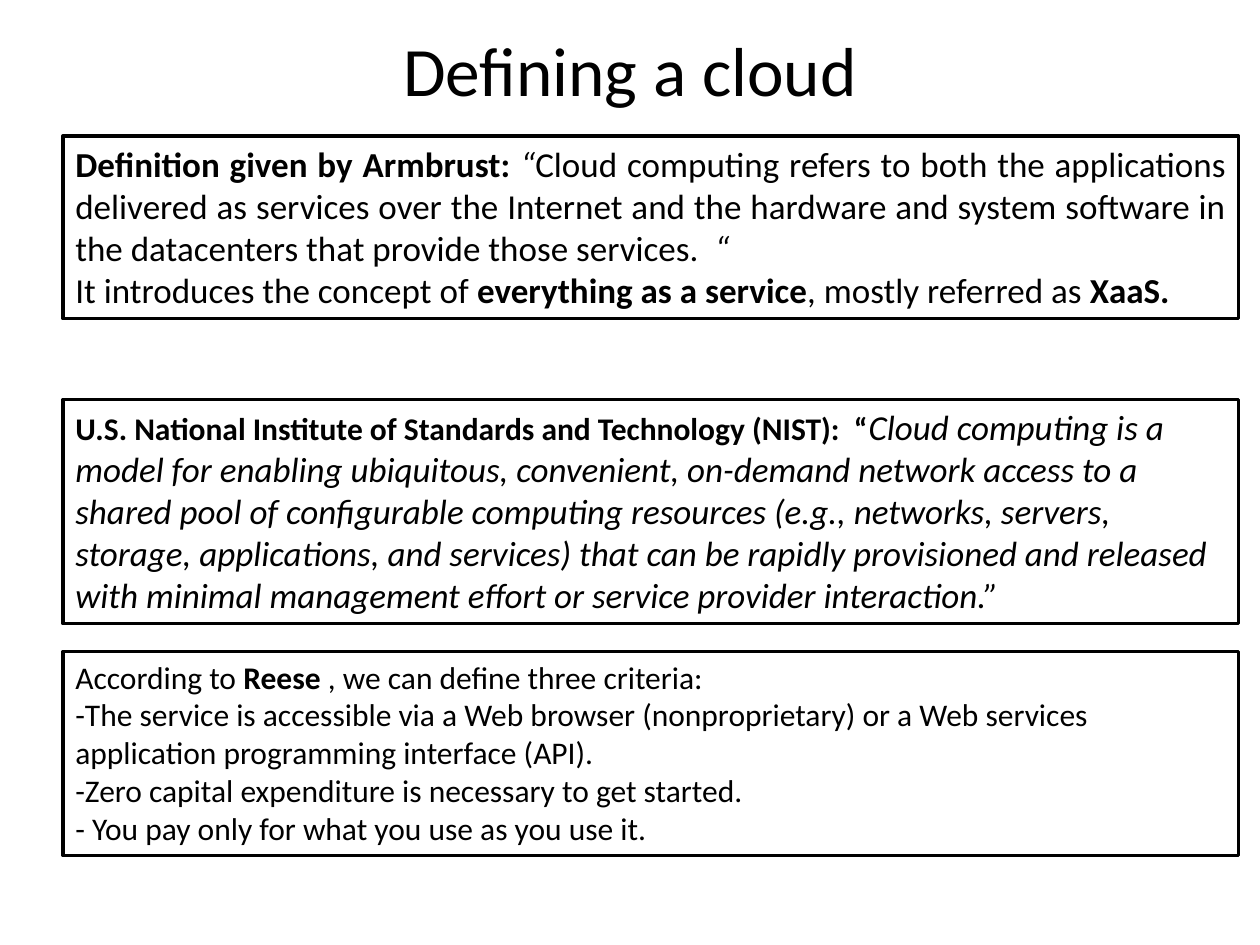
from pptx import Presentation
from pptx.dml.color import RGBColor
from pptx.enum.shapes import MSO_SHAPE as Shape
from pptx.enum.text import MSO_ANCHOR as Anchor, MSO_AUTO_SIZE as AutoSize, PP_ALIGN as Align
from pptx.util import Inches, Pt

COLORS = {"ink": "000000", "paper": "FFFFFF"}
FONT = "Calibri"
SLIDE_WIDTH, SLIDE_HEIGHT = 10, 7.5
LEFT, BOX_WIDTH = 0.05 * SLIDE_WIDTH, 9.33
TITLE = "Defining a cloud"

# Each paragraph is a list of runs: (text, style, optional size);
# style is "" or holds "b" for bold, "i" for italic.
DEFINITIONS = [
    {"top": 1.08, "height": 1.45, "size": 20, "align": Align.JUSTIFY, "paragraphs": [
        [("Definition given by Armbrust: ", "b"), ("“", "i"),
         ("Cloud computing refers to both the applications delivered as services over "
          "the Internet and the hardware and system software in the datacenters that "
          "provide those services. ", ""), (" “", "i")],
        [("It introduces the concept of ", ""), ("everything as a service", "b"),
         (", mostly referred as ", ""), ("XaaS.", "b")],
    ]},
    {"top": 3.17, "height": 1.78, "size": 18, "align": Align.LEFT, "paragraphs": [
        [("U.S. National Institute of Standards and Technology (NIST):  “", "b"),
         ("Cloud computing is a model for enabling ubiquitous, convenient, on-demand "
          "network access to a shared pool of configurable computing resources (e.g., "
          "networks, servers, storage, applications, and services) that can be rapidly "
          "provisioned and released with minimal management effort or service provider "
          "interaction.”", "i", 20)],
    ]},
    {"top": 5.17, "height": 1.62, "size": 18, "align": Align.LEFT, "paragraphs": [
        [("According to ", ""), ("Reese ", "b"), (", we can define three criteria:", "")],
        [("-The service is accessible via a Web browser (nonproprietary) or a Web "
          "services application programming interface (API).", "")],
        [("-Zero capital expenditure is necessary to get started.", "")],
        [("- You pay only for what you use as you use it.", "")],
    ]},
]


def color(name):
    return RGBColor.from_string(COLORS[name])


def write_text(shape, paragraphs, size, align, anchor=Anchor.MIDDLE, auto_size=AutoSize.NONE):
    frame = shape.text_frame
    frame.word_wrap = True
    frame.auto_size = auto_size
    frame.vertical_anchor = anchor
    for index, runs in enumerate(paragraphs):
        paragraph = frame.add_paragraph() if index else frame.paragraphs[0]
        paragraph.alignment = align
        for text, style, *own_size in runs:
            run = paragraph.add_run()
            run.text = text
            font = run.font
            font.name = FONT
            font.size = Pt(own_size[0] if own_size else size)
            font.bold, font.italic = "b" in style, "i" in style
            font.color.rgb = color("ink")


def add_definition(slide, top, height, paragraphs, size, align):
    box = slide.shapes.add_shape(Shape.RECTANGLE, Inches(LEFT), Inches(top),
                                 Inches(BOX_WIDTH), Inches(height))
    box.shadow.inherit = False
    box.fill.solid()
    box.fill.fore_color.rgb = color("paper")
    box.line.color.rgb = color("ink")
    box.line.width = Pt(2)
    write_text(box, paragraphs, size, align, anchor=Anchor.TOP,
               auto_size=AutoSize.SHAPE_TO_FIT_TEXT)


def main():
    presentation = Presentation()
    presentation.slide_width = Inches(SLIDE_WIDTH)
    presentation.slide_height = Inches(SLIDE_HEIGHT)
    slide = presentation.slides.add_slide(presentation.slide_layouts[5])

    title = slide.shapes.title
    title.left, title.top = Inches(LEFT), Inches(0.17)
    title.width, title.height = Inches(SLIDE_WIDTH - 2 * LEFT), Inches(0.75)
    write_text(title, [[(TITLE, "")]], size=39.6, align=Align.CENTER)

    for definition in DEFINITIONS:
        add_definition(slide, **definition)
    presentation.save("out.pptx")


if __name__ == "__main__":
    main()
